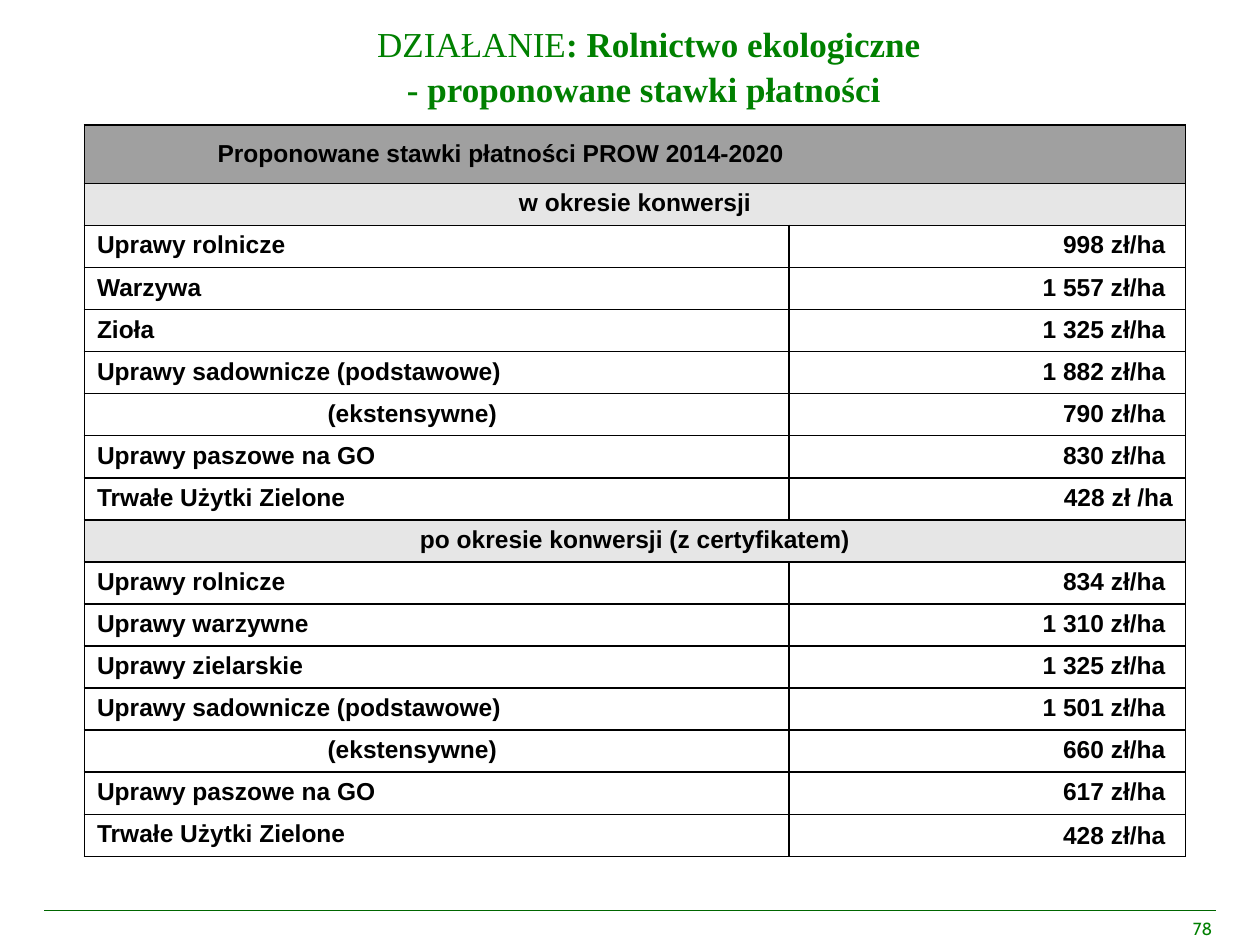
from lxml.etree import SubElement
from pptx import Presentation
from pptx.dml.color import RGBColor
from pptx.enum.shapes import MSO_CONNECTOR
from pptx.enum.text import MSO_ANCHOR, PP_ALIGN
from pptx.oxml.ns import qn
from pptx.util import Inches, Pt

WIDTH, HEIGHT = Inches(10), Inches(7.5)
GREEN, BLACK = "008000", "000000"
HEADER_GREY, SECTION_GREY, WHITE = "A0A0A0", "E6E6E6", "FFFFFF"

SECTIONS = [
    ("w okresie konwersji", [
        ("Uprawy rolnicze", "998 zł/ha"),
        ("Warzywa", "1 557 zł/ha"),
        ("Zioła", "1 325 zł/ha"),
        ("Uprawy sadownicze (podstawowe)", "1 882 zł/ha"),
        ("(ekstensywne)", "790 zł/ha"),
        ("Uprawy paszowe na GO", "830 zł/ha"),
        ("Trwałe Użytki Zielone", "428 zł /ha"),
    ]),
    ("po okresie konwersji (z certyfikatem)", [
        ("Uprawy rolnicze", "834 zł/ha"),
        ("Uprawy warzywne", "1 310 zł/ha"),
        ("Uprawy zielarskie", "1 325 zł/ha"),
        ("Uprawy sadownicze (podstawowe)", "1 501 zł/ha"),
        ("(ekstensywne)", "660 zł/ha"),
        ("Uprawy paszowe na GO", "617 zł/ha"),
        ("Trwałe Użytki Zielone", "428 zł/ha"),
    ]),
]


def color(value):
    return RGBColor.from_string(value)


def region(left, top, width, height):
    """Turn percentages of the slide into a box."""
    return (int(WIDTH * left / 100), int(HEIGHT * top / 100),
            int(WIDTH * width / 100), int(HEIGHT * height / 100))


def style(font, name, size, value, bold=False):
    font.name, font.size, font.bold = name, Pt(size), bold
    font.color.rgb = color(value)


def add_title(slide, box):
    frame = slide.shapes.add_textbox(*box).text_frame
    frame.word_wrap = True
    frame.vertical_anchor = MSO_ANCHOR.MIDDLE
    frame.margin_top, frame.margin_bottom = Inches(0.08), 0
    lines = [
        (0.58, [("DZIAŁANIE", False), (": Rolnictwo ekologiczne", True)]),
        (0.5, [("- proponowane stawki płatności", True)]),
    ]
    for number, (indent, parts) in enumerate(lines):
        paragraph = frame.add_paragraph() if number else frame.paragraphs[0]
        paragraph.alignment = PP_ALIGN.CENTER
        paragraph.space_before = Pt(1.5 * number)
        paragraph._p.get_or_add_pPr().set("marL", str(Inches(indent)))
        for text, bold in parts:
            run = paragraph.add_run()
            run.text = text
            style(run.font, "Times New Roman", 20, GREEN, bold)


def add_borders(cell):
    properties = cell._tc.get_or_add_tcPr()
    for position, side in enumerate(("lnL", "lnR", "lnT", "lnB")):
        line = properties.makeelement(qn(f"a:{side}"), {"w": str(Pt(1))})
        fill = SubElement(line, qn("a:solidFill"))
        SubElement(fill, qn("a:srgbClr"), val=BLACK)
        properties.insert(position, line)


def fill_cell(cell, text, fill=WHITE, align=PP_ALIGN.LEFT, left=0.1, right=0.1,
              anchor=MSO_ANCHOR.TOP):
    cell.text_frame.text = text
    cell.margin_left, cell.margin_right = Inches(left), Inches(right)
    cell.vertical_anchor = anchor
    cell.fill.solid()
    cell.fill.fore_color.rgb = color(fill)
    paragraph = cell.text_frame.paragraphs[0]
    paragraph.alignment = align
    style(paragraph.runs[0].font, "Arial", 14, BLACK, True)


def add_rates_table(slide, box):
    left, top, width, height = box
    count = 1 + sum(1 + len(rates) for _, rates in SECTIONS)
    table = slide.shapes.add_table(count, 2, *box).table
    table.first_row = table.horz_banding = False

    # Column widths and row heights as shares of the box
    table.columns[0].width = int(width * 0.64)
    table.columns[1].width = width - table.columns[0].width
    header_height = int(height * 0.08)
    for row in table.rows:
        row.height = (height - header_height) // (count - 1)
    table.rows[0].height = header_height

    def fill_band(index, text, fill, **options):
        table.cell(index, 0).merge(table.cell(index, 1))
        fill_cell(table.cell(index, 0), text, fill, PP_ALIGN.CENTER, **options)

    # Header, then each section with its rates
    fill_band(0, "Proponowane stawki płatności PROW 2014-2020", HEADER_GREY,
              right=2.23, anchor=MSO_ANCHOR.MIDDLE)
    index = 1
    for heading, rates in SECTIONS:
        fill_band(index, heading, SECTION_GREY)
        for index, (crop, rate) in enumerate(rates, index + 1):
            fill_cell(table.cell(index, 0), crop,
                      left=1.93 if crop.startswith("(") else 0.1)
            fill_cell(table.cell(index, 1), rate, align=PP_ALIGN.RIGHT,
                      right=0.1 if " /" in rate else 0.16,
                      anchor=MSO_ANCHOR.BOTTOM if index == count - 1
                      else MSO_ANCHOR.TOP)
        index += 1
    for cell in table.iter_cells():
        add_borders(cell)


def add_footer(slide, box):
    left, top, width, height = box
    # Rule above the page number
    rule = slide.shapes.add_connector(MSO_CONNECTOR.STRAIGHT,
                                      left, top, left + width, top)
    rule.line.color.rgb = color("006600")
    rule.line.width = Pt(0.25)
    SubElement(rule._element.spPr, qn("a:effectLst"))

    # Page number
    frame = slide.shapes.add_textbox(
        *region(68.1, 96.53, 29.1, 3.87)).text_frame
    frame.word_wrap = True
    frame.text = "78"
    frame.paragraphs[0].alignment = PP_ALIGN.RIGHT
    style(frame.paragraphs[0].runs[0].font, "Cabin", 10, GREEN)


def main():
    presentation = Presentation()
    presentation.slide_width, presentation.slide_height = WIDTH, HEIGHT
    slide = presentation.slides.add_slide(presentation.slide_layouts[6])
    add_footer(slide, region(3.5, 96.27, 93, 3.73))
    add_title(slide, region(-2.8, 2.8, 102.8, 7.33))
    add_rates_table(slide, region(6.7, 13.2, 87.4, 77.47))
    presentation.save("out.pptx")


if __name__ == "__main__":
    main()
